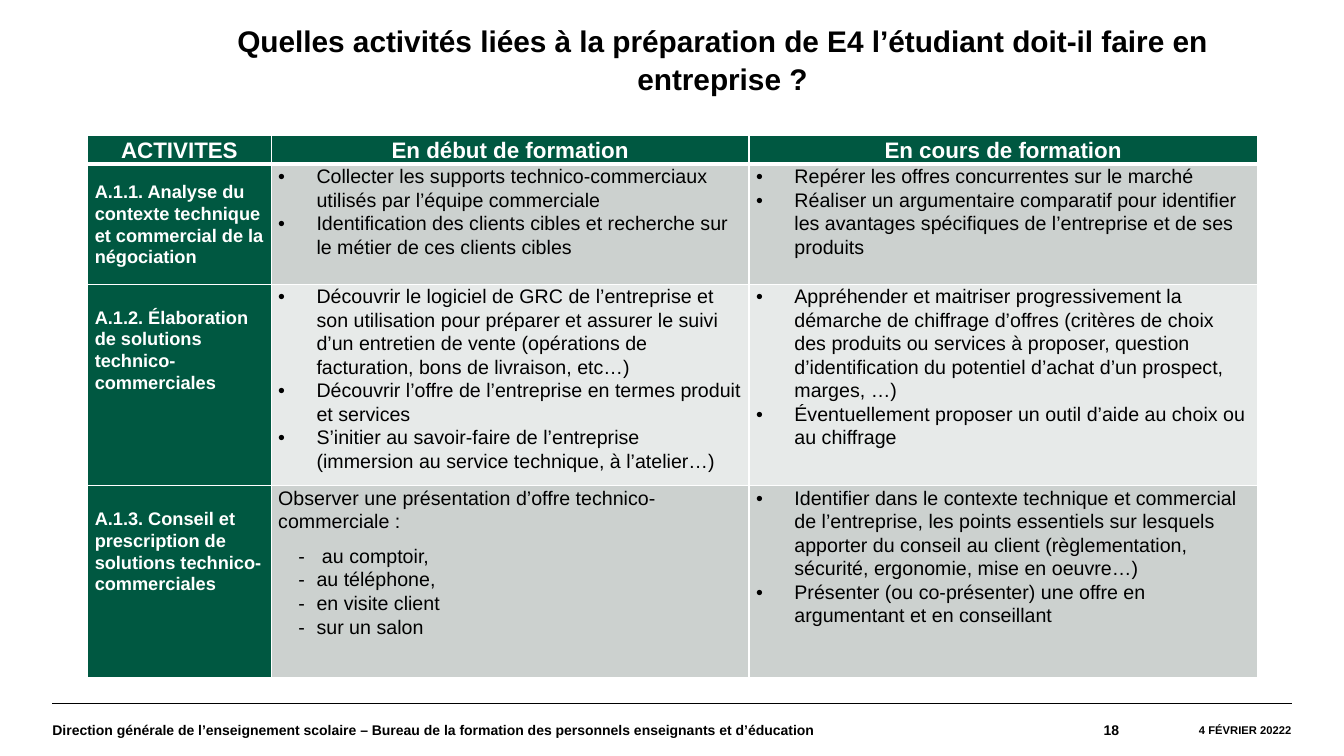
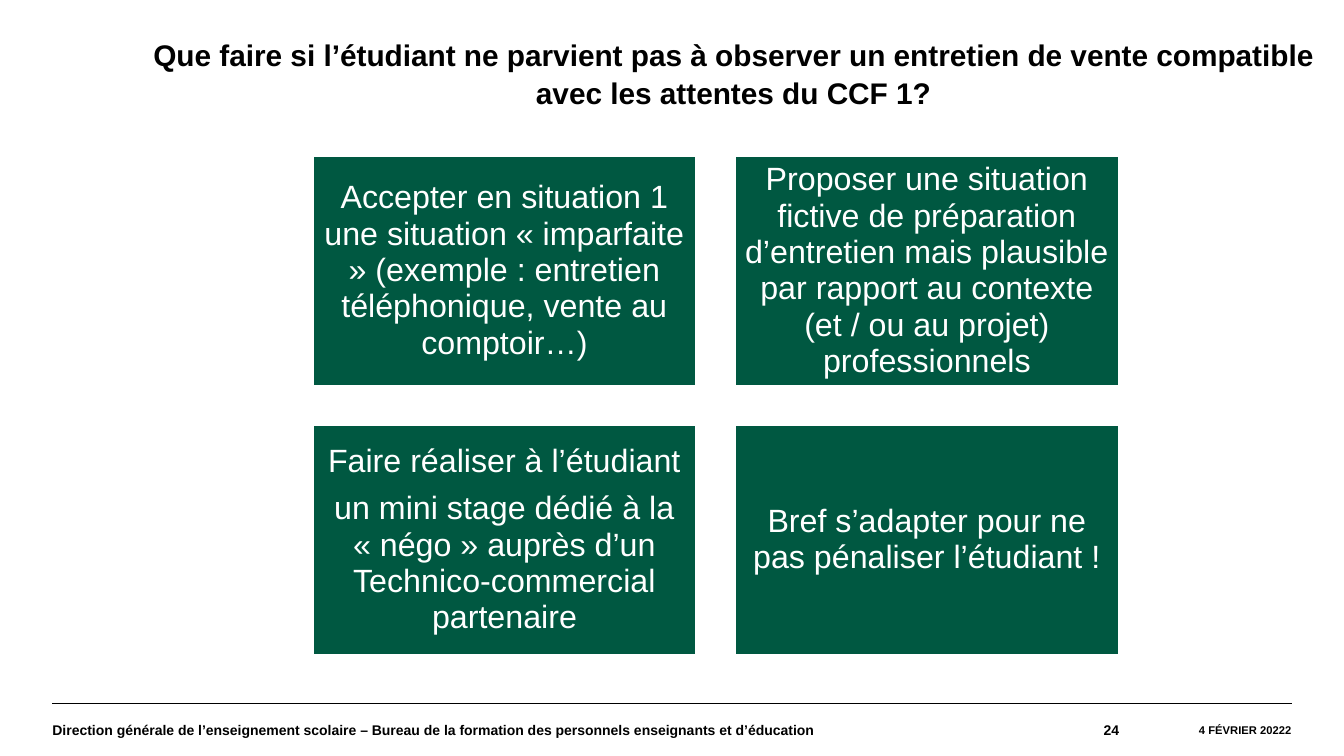
from lxml.etree import SubElement
from pptx import Presentation
from pptx.dml.color import RGBColor
from pptx.enum.shapes import MSO_CONNECTOR, MSO_SHAPE
from pptx.enum.text import MSO_ANCHOR, MSO_AUTO_SIZE, PP_ALIGN
from pptx.oxml.ns import qn
from pptx.util import Inches, Pt

GREEN, WHITE, BLACK = "005841", "FFFFFF", "000000"
DARK_BAND, LIGHT_BAND = "CCD1CF", "E7EAE9"
FOOTER = (
    "Direction générale de l’enseignement scolaire – Bureau de la formation "
    "des personnels enseignants et d’éducation"
)
DATE = "4 FÉVRIER 20222"
DOT, DASH = ("•", -0.38), ("-", -0.18)

HEADINGS = ["ACTIVITES", "En début de formation", "En cours de formation"]
ACTIVITIES = [
    (
        "A.1.1. Analyse du contexte technique et commercial de la négociation",
        [
            (DOT, "Collecter les supports technico-commerciaux utilisés par l’équipe commerciale"),
            (DOT, "Identification des clients cibles et recherche sur le métier de ces clients cibles"),
        ],
        [
            (DOT, "Repérer les offres concurrentes sur le marché"),
            (DOT, "Réaliser un argumentaire comparatif pour identifier les avantages "
                  "spécifiques de l’entreprise et de ses produits"),
        ],
    ),
    (
        "A.1.2. Élaboration de solutions technico-commerciales",
        [
            (DOT, "Découvrir le logiciel de GRC de l’entreprise et son utilisation pour "
                  "préparer et assurer le suivi d’un entretien de vente (opérations de "
                  "facturation, bons de livraison, etc…)"),
            (DOT, "Découvrir l’offre de l’entreprise en termes produit et services"),
            (DOT, "S’initier au savoir-faire de l’entreprise (immersion au service "
                  "technique, à l’atelier…)"),
        ],
        [
            (DOT, "Appréhender et maitriser progressivement la démarche de chiffrage "
                  "d’offres (critères de choix des produits ou services à proposer, question "
                  "d’identification du potentiel d’achat d’un prospect, marges, …)"),
            (DOT, "Éventuellement proposer un outil d’aide au choix ou au chiffrage"),
        ],
    ),
    (
        "A.1.3. Conseil et prescription de solutions technico-commerciales",
        [
            (None, "Observer une présentation d’offre technico-commerciale :"),
            (DASH, " au comptoir,"),
            (DASH, "au téléphone,"),
            (DASH, "en visite client"),
            (DASH, "sur un salon"),
        ],
        [
            (DOT, "Identifier dans le contexte technique et commercial de l’entreprise, "
                  "les points essentiels sur lesquels apporter du conseil au client "
                  "(règlementation, sécurité, ergonomie, mise en oeuvre…)"),
            (DOT, "Présenter (ou co-présenter) une offre en argumentant et en conseillant"),
        ],
    ),
]
SOLUTIONS = [
    ["Accepter en situation 1 une situation « imparfaite » (exemple : entretien "
     "téléphonique, vente au comptoir…)"],
    ["Proposer une situation fictive de préparation d’entretien mais plausible par "
     "rapport au contexte (et / ou au projet) professionnels"],
    ["Faire réaliser à l’étudiant",
     "un mini stage dédié à la « négo » auprès d’un Technico-commercial partenaire"],
    ["Bref s’adapter pour ne pas pénaliser l’étudiant !"],
]


def colour(value):
    return RGBColor.from_string(value)


def apply(target, values):
    for name, value in values.items():
        setattr(target, name, value)


def place(*lengths):
    return [Inches(length) for length in lengths]


def margins(left, top, right, bottom):
    names = ("margin_left", "margin_top", "margin_right", "margin_bottom")
    return dict(zip(names, place(left, top, right, bottom)))


class SlideStyle:
    font = "Arial"

    def __init__(self, deck):
        self.deck = deck
        self.page = None

    def text(self, para, words, size, ink, bold=False, **layout):
        apply(para, layout)
        span = para.add_run()
        span.text = words
        apply(span.font, {"name": self.font, "size": Pt(size), "bold": bold})
        span.font.color.rgb = colour(ink)

    def paragraphs(self, frame, count):
        return [frame.paragraphs[0]] + [frame.add_paragraph() for _ in range(count - 1)]

    def bullet(self, para, mark):
        symbol, indent = mark
        properties = para._p.get_or_add_pPr()
        properties.set("marL", str(Inches(0.38)))
        properties.set("indent", str(Inches(indent)))
        SubElement(properties, qn("a:buFont"), typeface=self.font)
        SubElement(properties, qn("a:buChar"), char=symbol)

    def start(self, title, number, left, top, width):
        self.page = self.deck.slides.add_slide(self.deck.slide_layouts[5])
        heading = self.page.shapes.title
        apply(heading, dict(zip(("left", "top", "width", "height"), place(left, top, width, 0.82))))
        apply(heading.text_frame, {
            "word_wrap": True,
            "auto_size": MSO_AUTO_SIZE.SHAPE_TO_FIT_TEXT,
            "vertical_anchor": MSO_ANCHOR.TOP,
            **margins(0.1, 0.05, 0.1, 0.05),
        })
        self.text(heading.text_frame.paragraphs[0], title, 21.3, BLACK, True,
                  alignment=PP_ALIGN.CENTER, line_spacing=1.05)
        self.rule()
        self.label(FOOTER, 0.52, 8.61, 10, PP_ALIGN.LEFT)
        self.label(str(number), 9.13, 1.97, 10, PP_ALIGN.RIGHT)
        self.label(DATE, 11.1, 1.71, 8, PP_ALIGN.RIGHT)

    def rule(self):
        line = self.page.shapes.add_connector(
            MSO_CONNECTOR.STRAIGHT, *place(0.52, 6.98, 12.81, 6.98))
        line.line.color.rgb = colour(BLACK)
        line.line.width = Pt(0.8)
        SubElement(line._element.spPr, qn("a:effectLst"))

    def label(self, words, left, width, size, alignment):
        box = self.page.shapes.add_textbox(*place(left, 6.98, width, 0.52))
        apply(box.text_frame, {
            "word_wrap": True, "vertical_anchor": MSO_ANCHOR.MIDDLE, **margins(0, 0, 0, 0)})
        self.text(box.text_frame.paragraphs[0], words, size, BLACK, True, alignment=alignment)

    def panel(self, lines, left, top, width, height):
        box = self.page.shapes.add_shape(
            MSO_SHAPE.RECTANGLE, *place(left, top, width, height))
        box.shadow.inherit = False
        box.fill.solid()
        box.fill.fore_color.rgb = colour(GREEN)
        box.line.color.rgb = colour(WHITE)
        box.line.width = Pt(2)
        apply(box.text_frame, {
            "word_wrap": True, "vertical_anchor": MSO_ANCHOR.MIDDLE,
            **margins(0.1, 0.1, 0.1, 0.1)})
        for para, words in zip(self.paragraphs(box.text_frame, len(lines)), lines):
            self.text(para, words, 23, WHITE, alignment=PP_ALIGN.CENTER,
                      line_spacing=0.94, space_after=Pt(8))

    def cell(self, cell, fill, top=0, anchor=MSO_ANCHOR.TOP, edges=(1, 1, 1, 1)):
        properties = cell._tc.get_or_add_tcPr()
        for side, width in zip("LRTB", edges):
            edge = SubElement(properties, qn(f"a:ln{side}"), w=str(Pt(width)))
            SubElement(SubElement(edge, qn("a:solidFill")), qn("a:srgbClr"), val=WHITE)
        cell.fill.solid()
        cell.fill.fore_color.rgb = colour(fill)
        apply(cell, {"vertical_anchor": anchor, **margins(0.07, top, 0.07, 0)})
        return cell.text_frame

    def table(self, headings, rows, left, top, widths, heights):
        grid = self.page.shapes.add_table(
            len(heights), len(widths),
            *place(left, top, sum(widths), sum(heights))).table
        grid.horz_banding = False
        for column, width in zip(grid.columns, widths):
            column.width = Inches(width)
        for row, height in zip(grid.rows, heights):
            row.height = Inches(height)
        for index, words in enumerate(headings):
            frame = self.cell(grid.cell(0, index), GREEN,
                              anchor=MSO_ANCHOR.MIDDLE, edges=(1, 1, 1, 3))
            self.text(frame.paragraphs[0], words, 16, WHITE, True,
                      alignment=PP_ALIGN.CENTER, line_spacing=1.07)
        for index, (activity, *lists) in enumerate(rows, 1):
            first = index == 1
            edges = (1, 1, 3 if first else 1, 1)
            frame = self.cell(grid.cell(index, 0), GREEN, 0 if first else 0.22,
                              MSO_ANCHOR.MIDDLE if first else MSO_ANCHOR.TOP, edges)
            self.text(frame.paragraphs[0], activity, 13, WHITE, True, line_spacing=1.07)
            band = DARK_BAND if index % 2 else LIGHT_BAND
            for column, items in enumerate(lists, 1):
                frame = self.cell(grid.cell(index, column), band, edges=edges)
                for para, (mark, words) in zip(self.paragraphs(frame, len(items)), items):
                    if mark:
                        self.bullet(para, mark)
                    self.text(para, words, 14, BLACK, line_spacing=1.07,
                              space_after=Pt(0 if mark else 8))


def main():
    deck = Presentation()
    apply(deck, {"slide_width": Inches(13.33), "slide_height": Inches(7.5)})
    style = SlideStyle(deck)

    style.start("Quelles activités liées à la préparation de E4 l’étudiant doit-il "
                "faire en entreprise ?", 18, 1.52, 0.16, 11.29)
    style.table(HEADINGS, ACTIVITIES, 0.87, 1.34, [1.82, 4.74, 5.04], [0.29, 1.19, 2, 1.9])

    style.start("Que faire si l’étudiant ne parvient pas à observer un entretien de vente "
                "compatible avec les attentes du CCF 1?", 24, 1.21, 0.3, 12.13)
    width, height, gap = 3.81, 2.29, 0.38
    for index, lines in enumerate(SOLUTIONS):
        row, column = divmod(index, 2)
        style.panel(lines, 3.1 + column * (width + gap), 1.54 + row * (height + gap),
                    width, height)

    deck.save("out.pptx")


if __name__ == "__main__":
    main()
